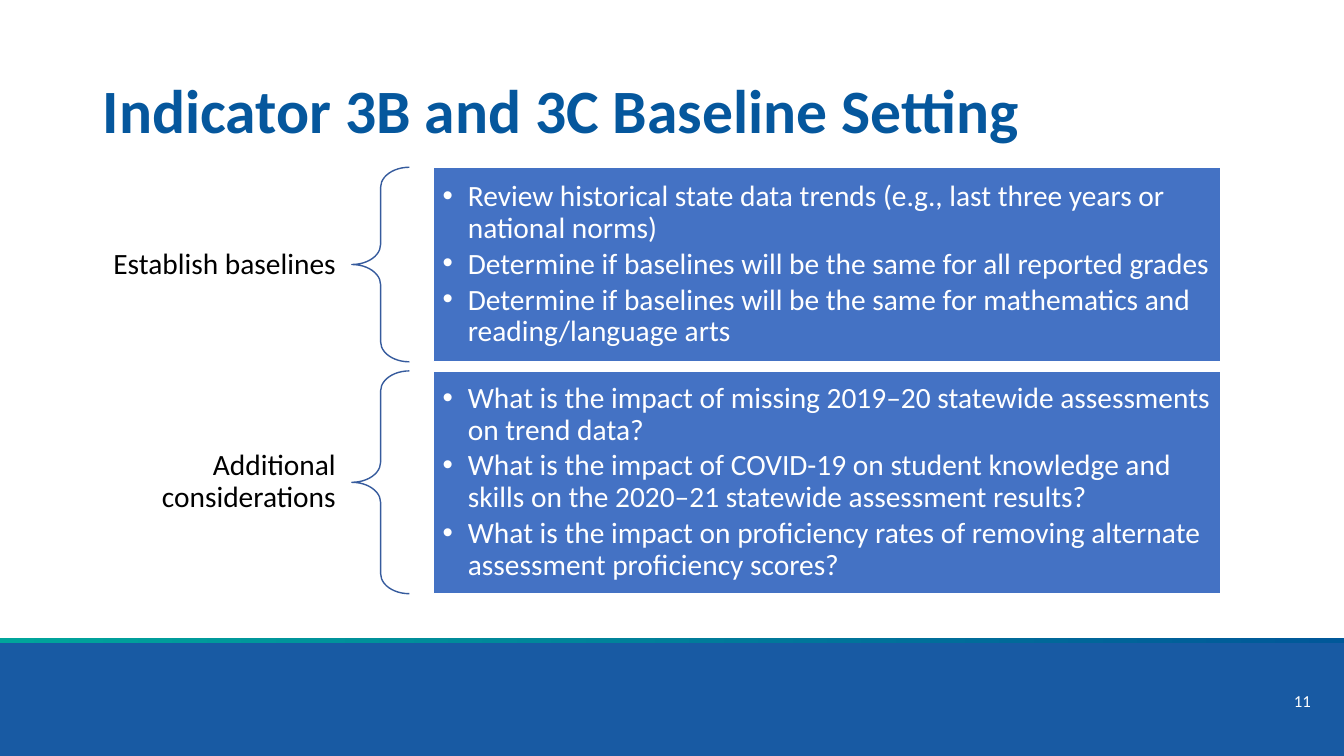
from lxml.etree import SubElement
from pptx import Presentation
from pptx.dml.color import RGBColor
from pptx.enum.shapes import MSO_SHAPE as Preset
from pptx.enum.text import MSO_ANCHOR as Anchor, PP_ALIGN as Align
from pptx.oxml.ns import qn
from pptx.util import Inches, Pt

FONT = "Calibri"
WHITE, BLACK = "FFFFFF", "000000"
TITLE_BLUE, FOOTER_BLUE, PANEL_BLUE, BRACE_BLUE = "05579D", "185AA3", "4472C4", "365B9D"
STRIPE_COLORS = ("005899", "00A59B")

TOPICS = [
    # label, label height, panel top, panel height, bullet points
    ("Establish baselines", 0.45, 1.66, 1.93, [
        "Review historical state data trends (e.g., last three years or national norms)",
        "Determine if baselines will be the same for all reported grades",
        "Determine if baselines will be the same for mathematics and reading/language arts",
    ]),
    ("Additional considerations", 0.77, 3.68, 2.21, [
        "What is the impact of missing 2019–20 statewide assessments on trend data?",
        "What is the impact of COVID-19 on student knowledge and skills on the 2020–21 "
        "statewide assessment results?",
        "What is the impact on proficiency rates of removing alternate assessment "
        "proficiency scores?",
    ]),
]


def rgb(color):
    return RGBColor.from_string(color)


def set_all(target, values):
    for name, value in values.items():
        setattr(target, name, value)


def write(shape, lines, size, color, bold=False, align=Align.LEFT, insets=(0.1, 0.05),
          spacing=None, bulleted=False):
    """Fill a shape's text frame, one paragraph per line."""
    side, edge = (Inches(inset) for inset in insets)
    frame = shape.text_frame
    set_all(frame, {"word_wrap": True, "vertical_anchor": Anchor.MIDDLE,
                    "margin_left": side, "margin_right": side,
                    "margin_top": edge, "margin_bottom": edge})
    frame.text = "\n".join(lines)
    for paragraph in frame.paragraphs:
        set_all(paragraph, {"alignment": align, **(spacing or {})})
        set_all(paragraph.font, {"name": FONT, "size": Pt(size), "bold": bold})
        paragraph.font.color.rgb = rgb(color)
        if bulleted:
            properties = paragraph._p.get_or_add_pPr()
            properties.set("marL", str(Inches(0.25)))
            properties.set("indent", str(-Inches(0.25)))
            SubElement(properties, qn("a:buFont")).set("typeface", "Arial")
            SubElement(properties, qn("a:buChar")).set("char", "•")


def add_text(slide, box, lines, size, color, **style):
    textbox = slide.shapes.add_textbox(*map(Inches, box))
    write(textbox, lines, size, color, **style)


def add_preset(slide, preset, box, fill=None, line=None):
    shape = slide.shapes.add_shape(preset, *map(Inches, box))
    shape.shadow.inherit = False
    if fill:
        shape.fill.solid()
        shape.fill.fore_color.rgb = rgb(fill)
    else:
        shape.fill.background()
    if line:
        shape.line.color.rgb = rgb(line)
        shape.line.width = Pt(1)
    else:
        shape.line.fill.background()
    return shape


def add_footer(slide, left, top, width, height, number):
    # Gradient stripe above the band
    stripe_height = 0.05
    stripe = add_preset(slide, Preset.RECTANGLE, (left, top, width, stripe_height))
    stripe.fill.gradient()
    stripe.fill.gradient_angle = 180
    for stop, color in zip(stripe.fill.gradient_stops, STRIPE_COLORS):
        stop.color.rgb = rgb(color)
    # Band and slide number
    add_preset(slide, Preset.RECTANGLE,
               (left, top + stripe_height, width, height - stripe_height), FOOTER_BLUE)
    add_text(slide, (left + width - 0.7, top + 0.34, 0.47, 0.56), [number], 12, WHITE,
             align=Align.RIGHT)


def add_topic(slide, left, top, width, height, label, label_height, points):
    label_width, brace_width, gap = 2.87, 0.57, 0.24
    brace_left = left + label_width
    panel_left = brace_left + brace_width + gap
    # Label, centred on the brace tip
    label_top = top + (height - label_height) / 2
    add_text(slide, (left, label_top, label_width, label_height), [label], 21, BLACK,
             align=Align.RIGHT, insets=(0.16, 0.06), spacing={"line_spacing": 0.9})
    # Brace
    brace = add_preset(slide, Preset.LEFT_BRACE, (brace_left, top, brace_width, height),
                       line=BRACE_BLUE)
    brace.adjustments[0] = 0.35
    # Panel with bullet points
    panel = add_preset(slide, Preset.RECTANGLE,
                       (panel_left, top, left + width - panel_left, height),
                       PANEL_BLUE, WHITE)
    write(panel, points, 21, WHITE, insets=(0.09, 0.09), bulleted=True,
          spacing={"line_spacing": 0.9, "space_after": Pt(3)})


def main():
    deck = Presentation()
    set_all(deck, {"slide_width": Inches(13.33), "slide_height": Inches(7.5)})
    slide = deck.slides.add_slide(deck.slide_layouts[6])

    add_footer(slide, 0, 6.33, 13.33, 1.17, "11")
    add_text(slide, (0.92, 0.4, 11.5, 1.45), ["Indicator 3B and 3C Baseline Setting"],
             44, TITLE_BLUE, bold=True, spacing={"line_spacing": 0.9})
    for label, label_height, top, height, points in TOPICS:
        add_topic(slide, 0.62, top, 11.49, height, label, label_height, points)

    deck.save("out.pptx")


if __name__ == "__main__":
    main()
